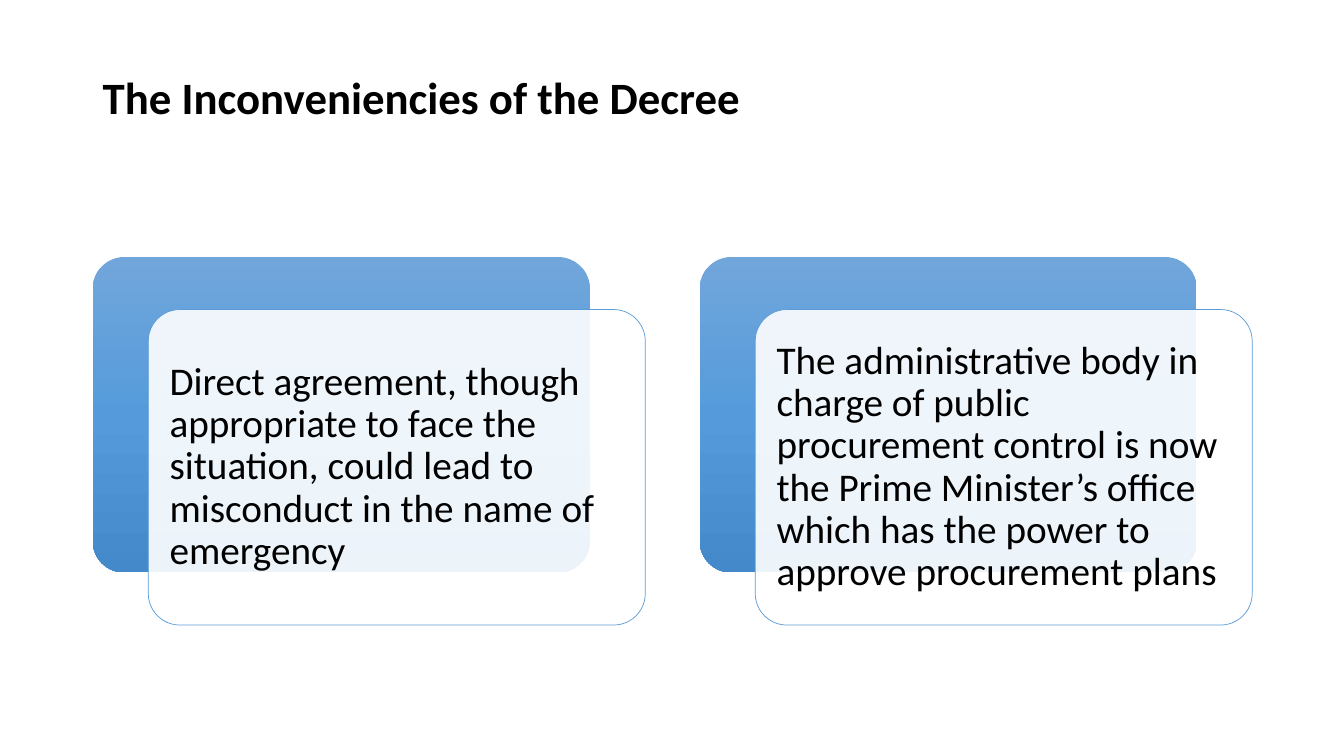
from copy import deepcopy

from lxml import etree
from pptx import Presentation
from pptx import util as u
from pptx.dml.color import RGBColor
from pptx.enum import shapes, text
from pptx.oxml.ns import qn

COLORS = {
    "ink": "000000",
    "paper": "FFFFFF",
    "outline": "5B9BD5",
    "top": "71A6DB",
    "middle": "559BDB",
    "bottom": "448ACA",
}
POINTS = [
    "Direct agreement, though appropriate to face the situation, could lead to "
    "misconduct in the name of emergency",
    "The administrative body in charge of public procurement control is now the "
    "Prime Minister’s office which has the power to approve procurement plans",
]
LEFT, TOP = 6.9, 34
CARD_WIDTH, CARD_HEIGHT = 36.98, 41.73
PITCH = 45.16
SHIFT_X, SHIFT_Y = 4.13, 6.95


class Deck:
    font = "Calibri"

    def __init__(self):
        self.prs = Presentation()
        self.prs.slide_width = u.Inches(13.33)
        self.prs.slide_height = u.Inches(7.5)
        self.s = self.prs.slides.add_slide(self.prs.slide_layouts[6])

    def color(self, name):
        return RGBColor.from_string(COLORS[name])

    def box(self, x, y, w, h):
        width, height = self.prs.slide_width, self.prs.slide_height
        return [int(share * side / 100)
                for share, side in zip((x, y, w, h), (width, height) * 2)]

    def set_text(self, sp, words, size, bold=False):
        tf = sp.text_frame
        tf.word_wrap = True
        tf.vertical_anchor = text.MSO_ANCHOR.MIDDLE
        p = tf.paragraphs[0]
        p.text = words
        p.alignment = text.PP_ALIGN.LEFT
        p.line_spacing = 0.9
        p.font.name = self.font
        p.font.size = u.Pt(size)
        p.font.bold = bold
        p.font.color.rgb = self.color("ink")
        return tf

    def title(self, words, *place):
        sp = self.s.shapes.add_textbox(*self.box(*place))
        self.set_text(sp, words, 32, bold=True)

    def card(self, *place):
        sp = self.s.shapes.add_shape(
            shapes.MSO_SHAPE.ROUNDED_RECTANGLE, *self.box(*place))
        sp.adjustments[0] = 0.1
        sp.shadow.inherit = False
        return sp

    def back_card(self, *place):
        sp = self.card(*place)
        sp.line.fill.background()
        sp.fill.gradient()
        sp.fill.gradient_angle = 270
        stops = sp._element.spPr.find(".//" + qn("a:gsLst"))
        stops.insert(1, deepcopy(stops[0]))
        names = ("top", "middle", "bottom")
        for stop, name, position in zip(sp.fill.gradient_stops, names, (0, 0.5, 1)):
            stop.color.rgb = self.color(name)
            stop.position = position

    def front_card(self, words, *place):
        sp = self.card(*place)
        sp.fill.solid()
        sp.fill.fore_color.rgb = self.color("paper")
        fill_color = sp._element.spPr.find(qn("a:solidFill"))[0]
        etree.SubElement(fill_color, qn("a:alpha"), val="90000")
        sp.line.color.rgb = self.color("outline")
        sp.line.width = u.Pt(0.5)
        tf = self.set_text(sp, words, 28)
        tf.margin_left = tf.margin_right = u.Inches(0.12)
        tf.margin_top = tf.margin_bottom = u.Inches(0.12)


def main():
    deck = Deck()
    deck.title("The Inconveniencies of the Decree", LEFT, 5.33, 86.27, 15.73)
    for i, words in enumerate(POINTS):
        x = LEFT + i * PITCH
        deck.back_card(x, TOP, CARD_WIDTH, CARD_HEIGHT)
        deck.front_card(words, x + SHIFT_X, TOP + SHIFT_Y, CARD_WIDTH, CARD_HEIGHT)
    deck.prs.save("out.pptx")


if __name__ == "__main__":
    main()
